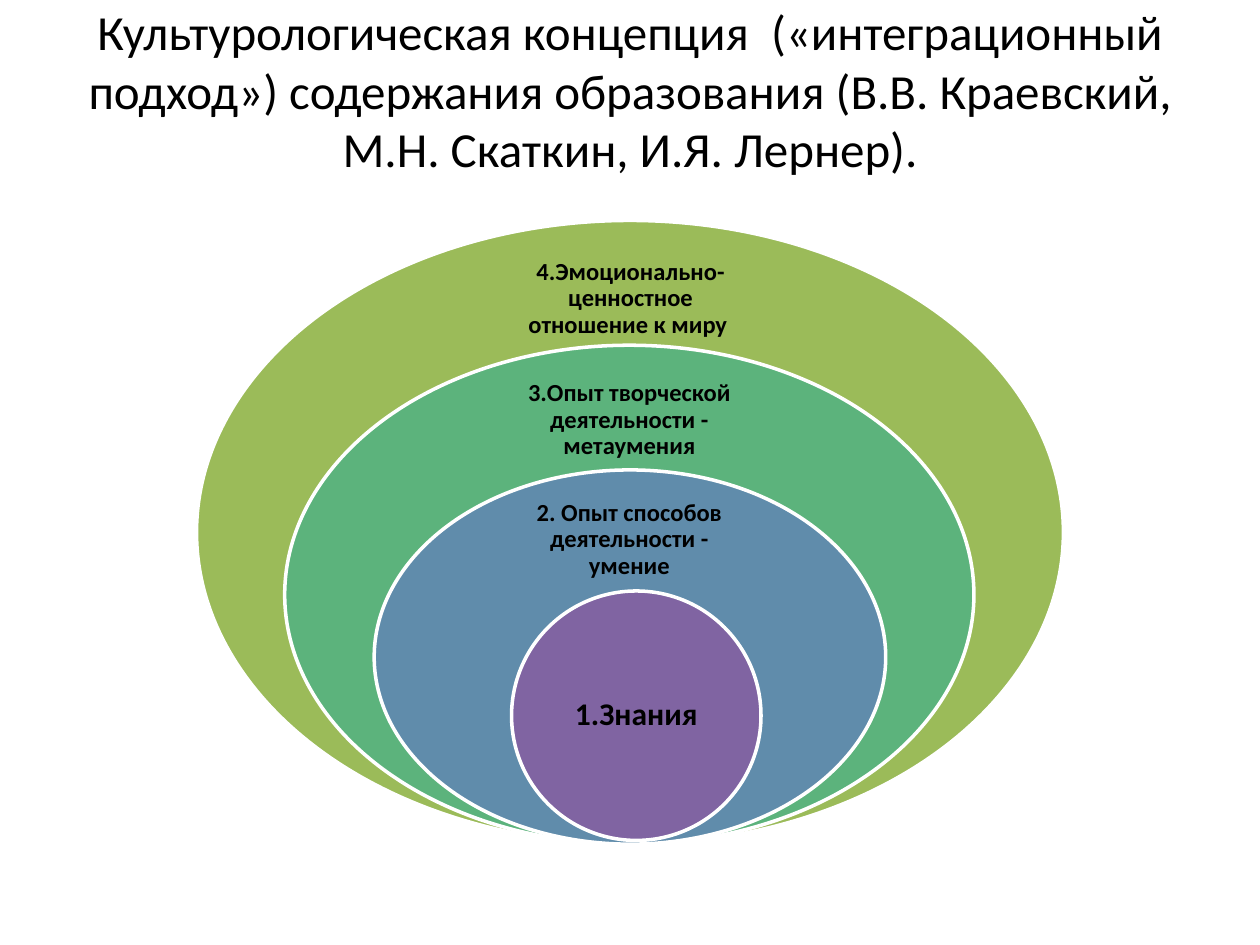
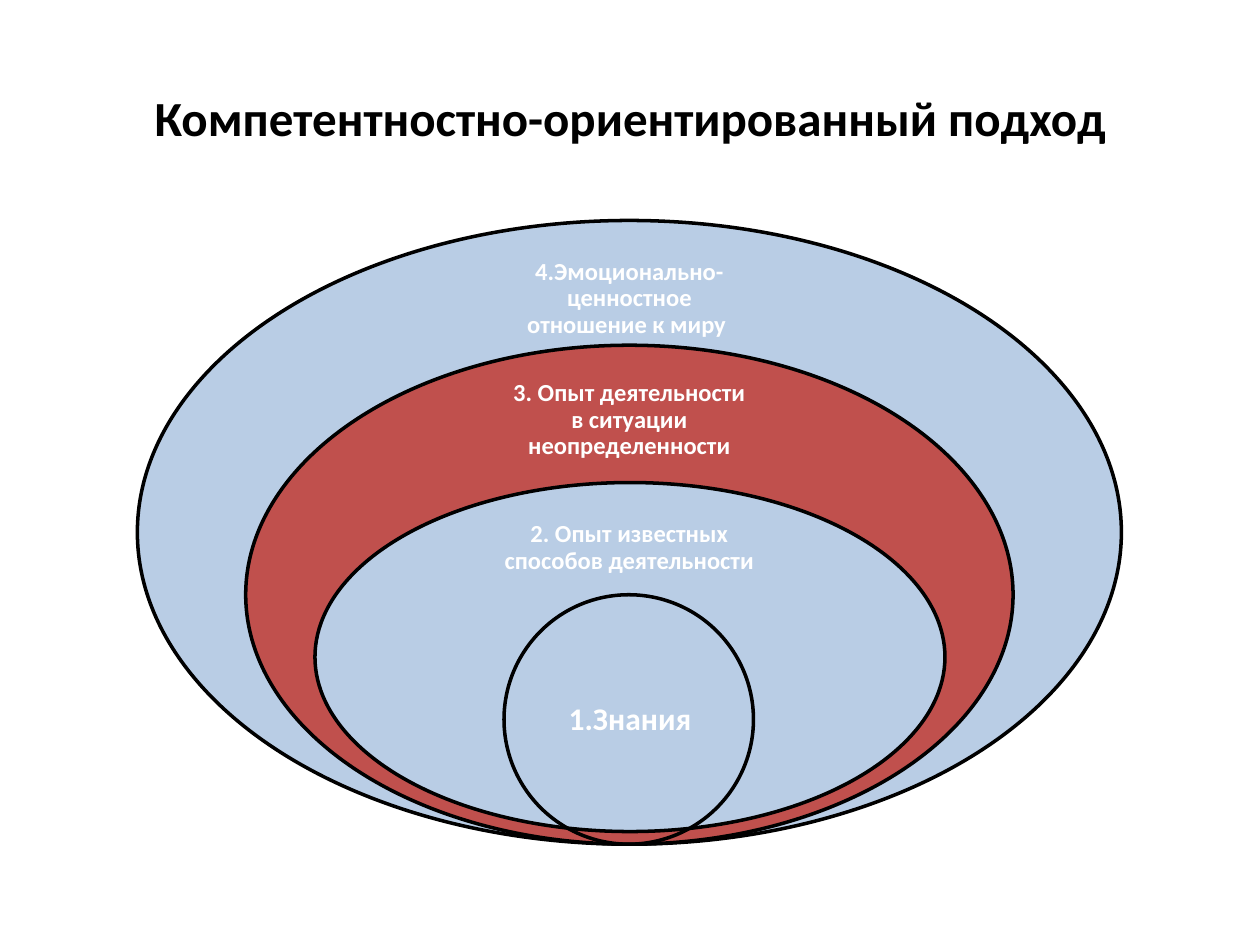
from pptx import Presentation
from pptx.dml.color import RGBColor
from pptx.enum.shapes import MSO_SHAPE as Shape
from pptx.enum.text import MSO_ANCHOR as Anchor, MSO_AUTO_SIZE as AutoSize, PP_ALIGN as Align
from pptx.util import Pt

EMU_PER_PX = 9144  # 100 px to the inch
TITLE_ONLY = 5
FONT, BLACK, WHITE = "Calibri", "000000", "FFFFFF"
OLIVE, GREEN, STEEL, PURPLE = "9BBB59", "5CB37C", "608CAB", "8064A2"
PALE_BLUE, RED = "B9CDE5", "C0504D"

TITLE_BOX = (50, 30, 900, 125)
RING_STEP = 99
# Label place inside its ring, as shares of the ring: top, width, height
LABEL_SHARES = [(0.05, 0.28, 0.15), (0.06, 0.35, 0.18), (0.075, 0.466, 0.225), (0.25, 0.707, 0.5)]


def px(length):
    return round(length) * EMU_PER_PX


def rgb(hex_colour):
    return RGBColor.from_string(hex_colour)


def write(shape, text, size=14, bold=True, colour=BLACK, spacing=None, insets=(11, 11, 11, 11)):
    """Put one centred paragraph into a shape; insets are left, top, right, bottom."""
    frame = shape.text_frame
    frame.word_wrap = True
    frame.auto_size = AutoSize.NONE
    frame.vertical_anchor = Anchor.MIDDLE
    frame.margin_left, frame.margin_top, frame.margin_right, frame.margin_bottom = map(px, insets)
    paragraph = frame.paragraphs[0]
    paragraph.alignment = Align.CENTER
    if spacing:
        paragraph.line_spacing = spacing
    run = paragraph.add_run()
    run.text = text
    run.font.name, run.font.size, run.font.bold = FONT, Pt(size), bold
    run.font.color.rgb = rgb(colour)


def add_title(slide, text, bold, bottom_inset=5):
    title = slide.shapes.title
    title.left, title.top, title.width, title.height = map(px, TITLE_BOX)
    write(title, text, size=28, bold=bold, insets=(10, 5, 10, bottom_inset))


def add_ring(slide, box, fill, line_colour):
    ring = slide.shapes.add_shape(Shape.OVAL, *map(px, box))
    ring.shadow.inherit = False
    if fill:
        ring.fill.solid()
        ring.fill.fore_color.rgb = rgb(fill)
    else:
        ring.fill.background()
    ring.line.color.rgb = rgb(line_colour)
    ring.line.width = Pt(2)


def add_label(slide, ring_box, shares, text, colour, is_core):
    left, top, width, height = ring_box
    top_share, width_share, height_share = shares
    label_width = width * width_share
    label = slide.shapes.add_textbox(
        px(left + (width - label_width) / 2), px(top + height * top_share),
        px(label_width), px(height * height_share))
    inset = 14 if is_core else 11
    write(label, text, size=18 if is_core else 14, colour=colour, spacing=0.9, insets=(inset,) * 4)


def add_nested_rings(slide, box, rings, line_colour, text_colour):
    """Stack rings on the bottom centre of the box, each one step lower than the last."""
    left, top, width, height = box
    for level, (text, fill, ring_width, shift, lift, trim) in enumerate(rings):
        ring_box = (left + (width - ring_width) / 2 + shift,
                    top + level * RING_STEP + trim - lift,
                    ring_width, height - level * RING_STEP - trim)
        add_ring(slide, ring_box, fill, line_colour)
        add_label(slide, ring_box, LABEL_SHARES[level], text, text_colour,
                  is_core=level == len(rings) - 1)


def main():
    deck = Presentation()
    deck.slide_width, deck.slide_height = px(1000), px(750)
    layout = deck.slide_layouts[TITLE_ONLY]
    values = "4.Эмоционально-ценностное отношение к миру "
    knowledge = "1.Знания"

    # Cultural concept; rings: text, fill, width, shift right, lift, height trimmed
    culture = deck.slides.add_slide(layout)
    add_title(culture, "Культурологическая концепция  («интеграционный подход») содержания "
              "образования (В.В. Краевский, М.Н. Скаткин, И.Я. Лернер).",
              bold=False, bottom_inset=48)
    add_nested_rings(culture, (156, 175, 688, 495), [
        (values, OLIVE, 688, 0, 0, 0),
        ("3.Опыт творческой деятельности - метаумения", GREEN, 547, 0, 0, 0),
        ("2. Опыт способов деятельности - умение", STEEL, 406, 0, 0, 0),
        (knowledge, PURPLE, 198, 5, 3, 0),
    ], line_colour=WHITE, text_colour=BLACK)

    # Competence approach
    competence = deck.slides.add_slide(layout)
    add_title(competence, "Компетентностно-ориентированный подход", bold=True)
    add_nested_rings(competence, (109, 175, 781, 495), [
        (values, PALE_BLUE, 781, 0, 0, 0),
        ("3. Опыт деятельности в ситуации неопределенности", RED, 609, 0, 0, 0),
        ("2. Опыт известных способов деятельности", PALE_BLUE, 500, 0, 10, 20),
        (knowledge, None, 198, 0, 0, 0),
    ], line_colour=BLACK, text_colour=WHITE)

    deck.save("out.pptx")


if __name__ == "__main__":
    main()
